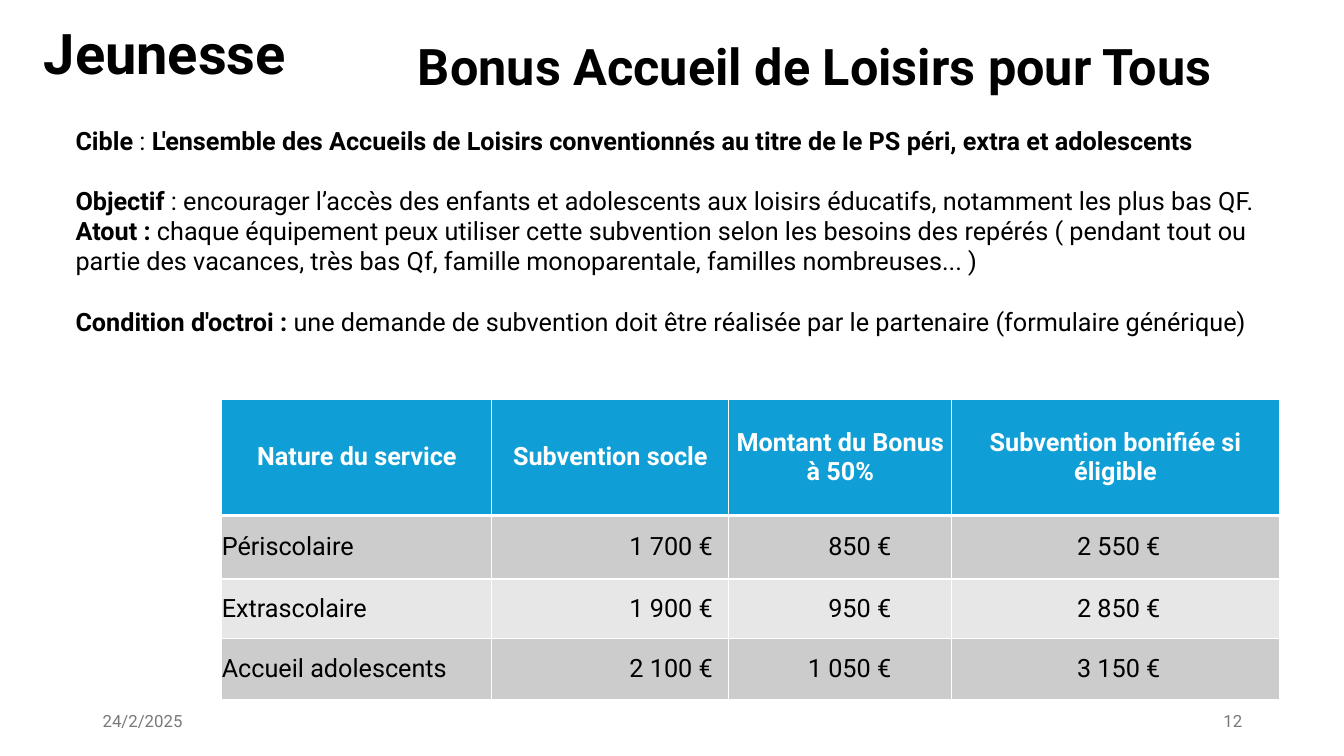
"""Build the slide on the youth bonus "Accueil de Loisirs pour Tous"."""
import pptx
import pptx.dml.color
import pptx.enum.text
import pptx.oxml
import pptx.oxml.ns
import pptx.util

Pt = pptx.util.Pt
RGB = pptx.dml.color.RGBColor.from_string
ALIGN = pptx.enum.text.PP_ALIGN
ANCHOR = pptx.enum.text.MSO_ANCHOR

THEME = {
    "font": "Roboto",
    "ink": "000000", "paper": "FFFFFF", "muted": "797979",
    "header": "0F9ED5", "bands": ("CCCCCC", "E7E7E7"),
    "title": 36, "section": 40, "body": 18, "footer": 12,
    "gap": 21.5, "rule": 1, "header_rule": 3,
}

prs = pptx.Presentation()
prs.slide_width = pptx.util.Inches(13.33)
prs.slide_height = pptx.util.Inches(7.5)
COL, ROW = prs.slide_width / 100, prs.slide_height / 100
s = prs.slides.add_slide(prs.slide_layouts[5])


def add_run(p, text, size, color="ink", bold=False):
    r = p.add_run()
    r.text = text
    fmt = {"name": THEME["font"], "size": Pt(THEME[size]), "bold": bold}
    for name, value in fmt.items():
        setattr(r.font, name, value)
    r.font.color.rgb = RGB(THEME[color])


def place(sp, x, y, w, h, anchor=ANCHOR.TOP):
    box = {"left": x * COL, "top": y * ROW, "width": w * COL, "height": h * ROW}
    for name, value in box.items():
        setattr(sp, name, int(value))
    fmt = {"word_wrap": True, "vertical_anchor": anchor,
           "auto_size": pptx.enum.text.MSO_AUTO_SIZE.NONE}
    for name, value in fmt.items():
        setattr(sp.text_frame, name, value)
    return sp.text_frame.paragraphs[0]


LABELS = [
    (s.shapes.title, (26.5, 4.93, 68.27, 9.87, ANCHOR.TOP),
     "Bonus Accueil de Loisirs pour Tous", "title", "ink", True, ALIGN.CENTER, 0.9),
    (None, (1.73, 2.8, 21.08, 12.27, ANCHOR.TOP),
     "Jeunesse", "section", "ink", True, ALIGN.CENTER, 0.9),
    (None, (6.9, 92.67, 22.5, 5.33, ANCHOR.MIDDLE),
     "24/2/2025", "footer", "muted", False, ALIGN.LEFT, 1.0),
    (None, (70.67, 92.67, 22.5, 5.33, ANCHOR.MIDDLE),
     "12", "footer", "muted", False, ALIGN.RIGHT, 1.0),
]
for sp, box, text, size, color, bold, align, spacing in LABELS:
    p = place(sp or s.shapes.add_textbox(0, 0, 0, 0), *box)
    for name, value in {"alignment": align, "line_spacing": spacing, "space_before": Pt(0)}.items():
        setattr(p, name, value)
    add_run(p, text, size, color, bold)

BODY = [
    (0, [("Cible", True), (" : ", False),
         ("L'ensemble des Accueils de Loisirs conventionnés au titre de le PS péri, "
          "extra et adolescents", True)]),
    (THEME["gap"], [("Objectif", True),
                    (" : encourager l’accès des enfants et adolescents aux loisirs éducatifs, "
                     "notamment les plus bas QF.", False)]),
    (0, [("Atout : ", True),
         ("chaque équipement peux utiliser cette subvention selon les besoins des repérés "
          "( pendant tout ou partie des vacances, très bas Qf, famille monoparentale, "
          "familles nombreuses... )", False)]),
    (THEME["gap"], [("Condition d'octroi : ", True),
                    ("une demande de subvention doit être réalisée par le partenaire "
                     "(formulaire générique)", False)]),
]
sp = s.shapes.add_textbox(0, 0, 0, 0)
p = place(sp, 4.88, 15.87, 93.7, 34.13)
for i, (gap, runs) in enumerate(BODY):
    if i:
        p = sp.text_frame.add_paragraph()
    p.space_before = Pt(gap)
    for text, bold in runs:
        add_run(p, text, "body", bold=bold)

CELLS = [
    ("Nature du service", "Subvention socle", "Montant du Bonus à 50%",
     "Subvention bonifiée si éligible"),
    ("Périscolaire", "1 700 €", "850 €", "2 550 €"),
    ("Extrascolaire", "1 900 €", "950 €", "2 850 €"),
    ("Accueil adolescents", "2 100 €", "1 050 €", "3 150 €"),
]
WIDTHS = (20.1, 17.63, 16.58, 24.38)
HEIGHTS = (15.4, 8.4, 7.87, 8.13)
AMOUNT_INSETS = (0, 1.2, 4.5, 8.85)

table = s.shapes.add_table(
    len(HEIGHTS), len(WIDTHS), int(16.5 * COL), int(52.8 * ROW),
    int(sum(WIDTHS) * COL), int(sum(HEIGHTS) * ROW)).table
table.horz_banding = False
for column, width in zip(table.columns, WIDTHS):
    column.width = int(width * COL)
for i, (row, height, texts) in enumerate(zip(table.rows, HEIGHTS, CELLS)):
    row.height = int(height * ROW)
    for j, (cell, text) in enumerate(zip(row.cells, texts)):
        header = i == 0
        inset = 0 if header else int(AMOUNT_INSETS[j] * COL)
        fmt = {"margin_left": 0, "margin_right": inset, "margin_top": 0,
               "margin_bottom": 0, "vertical_anchor": ANCHOR.MIDDLE}
        for name, value in fmt.items():
            setattr(cell, name, value)
        for side in ("lnL", "lnR", "lnT", "lnB"):
            heavy = (i, side) in ((0, "lnB"), (1, "lnT"))
            line = Pt(THEME["header_rule" if heavy else "rule"])
            cell._tc.get_or_add_tcPr().append(pptx.oxml.parse_xml(
                f'<a:{side} {pptx.oxml.ns.nsdecls("a")} w="{line}"><a:solidFill>'
                f'<a:srgbClr val="{THEME["paper"]}"/></a:solidFill></a:{side}>'))
        cell.fill.solid()
        cell.fill.fore_color.rgb = RGB(THEME["header"] if header else THEME["bands"][(i - 1) % 2])
        p = cell.text_frame.paragraphs[0]
        p.alignment = ALIGN.CENTER if header else ALIGN.RIGHT if j else ALIGN.LEFT
        add_run(p, text, "body", "paper" if header else "ink", header)

prs.save("out.pptx")
